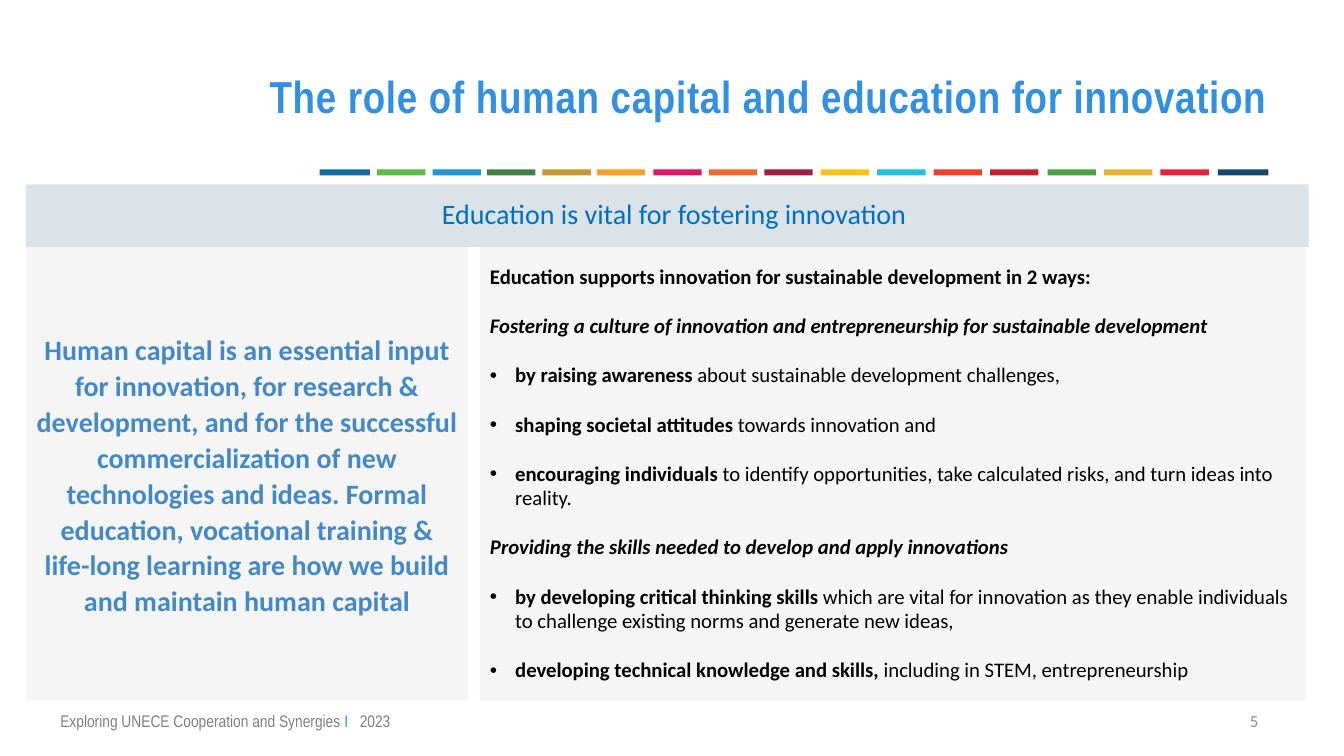
from dataclasses import dataclass

from lxml.etree import SubElement
from pptx import Presentation
from pptx.dml.color import RGBColor
from pptx.enum.shapes import MSO_SHAPE
from pptx.enum.text import MSO_ANCHOR, MSO_AUTO_SIZE, PP_ALIGN
from pptx.oxml.ns import qn
from pptx.util import Inches, Pt


@dataclass(frozen=True)
class Theme:
    """Colours, fonts and type sizes of the slide."""
    heading_font: str = "Arial Narrow"
    body_font: str = "Calibri"
    title: str = "3290E2"
    band_text: str = "0070C0"
    message: str = "4389C8"
    body: str = "000000"
    footer: str = "808080"
    number: str = "8C8C8C"
    band: str = "14496B"
    panel: str = "BFBFBF"
    opacity: int = 15
    title_size: float = 32
    lead_size: float = 20
    body_size: float = 14.8
    footer_size: float = 12


THEME = Theme()

STRIPES = [
    (3.17, "136B9E"), (3.74, "5DBA48"), (4.29, "1F95D3"), (4.83, "408046"),
    (5.38, "C6982E"), (5.92, "F99F2A"), (6.48, "DC1769"), (7.03, "F26B2D"),
    (7.58, "A21C44"), (8.14, "FAC216"), (8.7, "27BEE3"), (9.26, "EF402B"),
    (9.82, "C5202F"), (10.39, "4BA046"), (10.95, "E4B532"), (11.51, "E8223D"),
    (12.08, "14496B"),
]

MESSAGE = (
    "Human capital is an essential input for innovation, for research & "
    "development, and for the successful commercialization of new technologies "
    "and ideas. Formal education, vocational training & life-long learning are "
    "how we build and maintain human capital"
)

POINTS = [
    ("lead", "Education supports innovation for sustainable development in 2 ways:", ""),
    ("theme", "Fostering a culture of innovation and entrepreneurship for "
              "sustainable development", ""),
    ("bullet", "by raising awareness ", "about sustainable development challenges,"),
    ("bullet", "shaping societal attitudes ", "towards innovation and"),
    ("bullet", "encouraging individuals ",
     "to identify opportunities, take calculated risks, and turn ideas into reality."),
    ("theme", "Providing the skills needed to develop and apply innovations", ""),
    ("bullet", "by developing critical thinking skills ",
     "which are vital for innovation as they enable individuals to challenge "
     "existing norms and generate new ideas,"),
    ("bullet", "developing technical knowledge and skills, ",
     "including in STEM, entrepreneurship"),
]


def apply_format(target, values):
    """Set each attribute of the target from a dict."""
    for name, value in values.items():
        setattr(target, name, value)


def place(shape, box):
    """Move a shape to a box given in inches."""
    apply_format(shape, dict(zip(("left", "top", "width", "height"), map(Inches, box))))


def prepare_frame(shape, **values):
    """Give a text frame wrapping, middle anchoring and fixed size."""
    frame = shape.text_frame
    apply_format(frame, {"word_wrap": True, "auto_size": MSO_AUTO_SIZE.NONE,
                         "vertical_anchor": MSO_ANCHOR.MIDDLE, **values})
    return frame


def add_span(para, text, size, color, font=THEME.body_font, bold=False, italic=False):
    """Add one formatted run to a paragraph."""
    span = para.add_run()
    span.text = text
    apply_format(span.font, {"name": font, "size": Pt(size), "bold": bold, "italic": italic})
    span.font.color.rgb = RGBColor.from_string(color)
    return span


def fill_shape(shape, color, opacity=100):
    """Fill a shape with a colour at the given percentage of opacity."""
    shape.fill.solid()
    shape.fill.fore_color.rgb = RGBColor.from_string(color)
    if opacity < 100:
        tint = shape.fill._xPr.find(qn("a:solidFill"))[0]
        SubElement(tint, qn("a:alpha"), val=str(opacity * 1000))


def add_block(page, box, color, opacity=100):
    """Add a borderless rectangle."""
    block = page.shapes.add_shape(MSO_SHAPE.RECTANGLE, *map(Inches, box))
    fill_shape(block, color, opacity)
    block.line.fill.background()
    block.shadow.inherit = False
    return block


def add_title(page, box):
    """Set the slide title, right-aligned and slightly spaced out."""
    place(page.shapes.title, box)
    para = prepare_frame(page.shapes.title).paragraphs[0]
    para.alignment = PP_ALIGN.RIGHT
    span = add_span(para, "The role of human capital and education for innovation",
                    THEME.title_size, THEME.title, THEME.heading_font, bold=True)
    span.font._element.set("spc", "50")


def add_stripes(page, top, height):
    """Draw the row of coloured dashes under the title."""
    ends = (STRIPES[0], STRIPES[-1])
    for stripe in STRIPES:
        left, color = stripe
        add_block(page, (left, top, 0.5 if stripe in ends else 0.48, height), color)


def add_band(page, box):
    """Draw the band with the section heading."""
    band = add_block(page, box, THEME.band, THEME.opacity)
    para = prepare_frame(band, margin_left=Inches(0.23)).paragraphs[0]
    apply_format(para, {"alignment": PP_ALIGN.CENTER, "line_spacing": 0.9})
    add_span(para, "Education is vital for fostering innovation",
             THEME.lead_size, THEME.band_text)


def add_message(page, box):
    """Draw the left panel with the key message."""
    panel = add_block(page, box, THEME.panel, THEME.opacity)
    para = prepare_frame(panel).paragraphs[0]
    apply_format(para, {"alignment": PP_ALIGN.CENTER, "line_spacing": 1.07})
    add_span(para, MESSAGE, THEME.lead_size, THEME.message, bold=True)


def set_bullet(para, bulleted):
    """Turn the bullet of a paragraph on or off."""
    indent = Inches(0.25) if bulleted else 0
    properties = para._p.get_or_add_pPr()
    properties.set("marL", str(indent))
    properties.set("indent", str(-indent))
    if bulleted:
        SubElement(properties, qn("a:buFont"), typeface="Arial")
        SubElement(properties, qn("a:buChar"), char="•")
    else:
        SubElement(properties, qn("a:buNone"))


def add_points(page, box):
    """Fill the body placeholder with the two ways and their bullets."""
    body = page.placeholders[1]
    place(body, box)
    fill_shape(body, THEME.panel, THEME.opacity)
    frame = prepare_frame(body)
    for index, (kind, strong, plain) in enumerate(POINTS):
        para = frame.add_paragraph() if index else frame.paragraphs[0]
        set_bullet(para, kind == "bullet")
        apply_format(para, {"alignment": PP_ALIGN.LEFT, "line_spacing": 0.97,
                            "space_before": Pt(18 if index else 0), "space_after": Pt(0)})
        add_span(para, strong, THEME.body_size, THEME.body,
                 bold=True, italic=kind == "theme")
        if plain:
            add_span(para, plain, THEME.body_size, THEME.body)


def add_footer(page, box, number_box):
    """Write the footer line and the slide number."""
    footer = page.shapes.add_textbox(*map(Inches, box))
    para = prepare_frame(footer).paragraphs[0]
    tabs = SubElement(para._p.get_or_add_pPr(), qn("a:tabLst"))
    SubElement(tabs, qn("a:tab"), pos=str(Inches(2.97)), algn="l")
    for text, color in (("Exploring UNECE Cooperation and Synergies ", THEME.footer),
                        ("I\t", THEME.title), ("2023", THEME.footer)):
        add_span(para, text, THEME.footer_size, color, THEME.heading_font)
    number = page.shapes.add_textbox(*map(Inches, number_box))
    para = prepare_frame(number).paragraphs[0]
    para.alignment = PP_ALIGN.RIGHT
    add_span(para, "5", THEME.footer_size, THEME.number)


def main():
    """Build the slide and save the deck."""
    deck = Presentation()
    apply_format(deck, {"slide_width": Inches(13.33), "slide_height": Inches(7.5)})
    page = deck.slides.add_slide(deck.slide_layouts[1])
    add_title(page, (2.02, 0.4, 10.66, 1.09))
    add_stripes(page, 1.68, 0.06)
    add_band(page, (0.26, 1.83, 12.72, 0.62))
    add_message(page, (0.26, 2.45, 4.38, 4.5))
    add_points(page, (4.76, 2.45, 8.19, 4.5))
    add_footer(page, (0.5, 7, 10.44, 0.3), (11.63, 6.95, 0.95, 0.4))
    deck.save("out.pptx")


if __name__ == "__main__":
    main()
